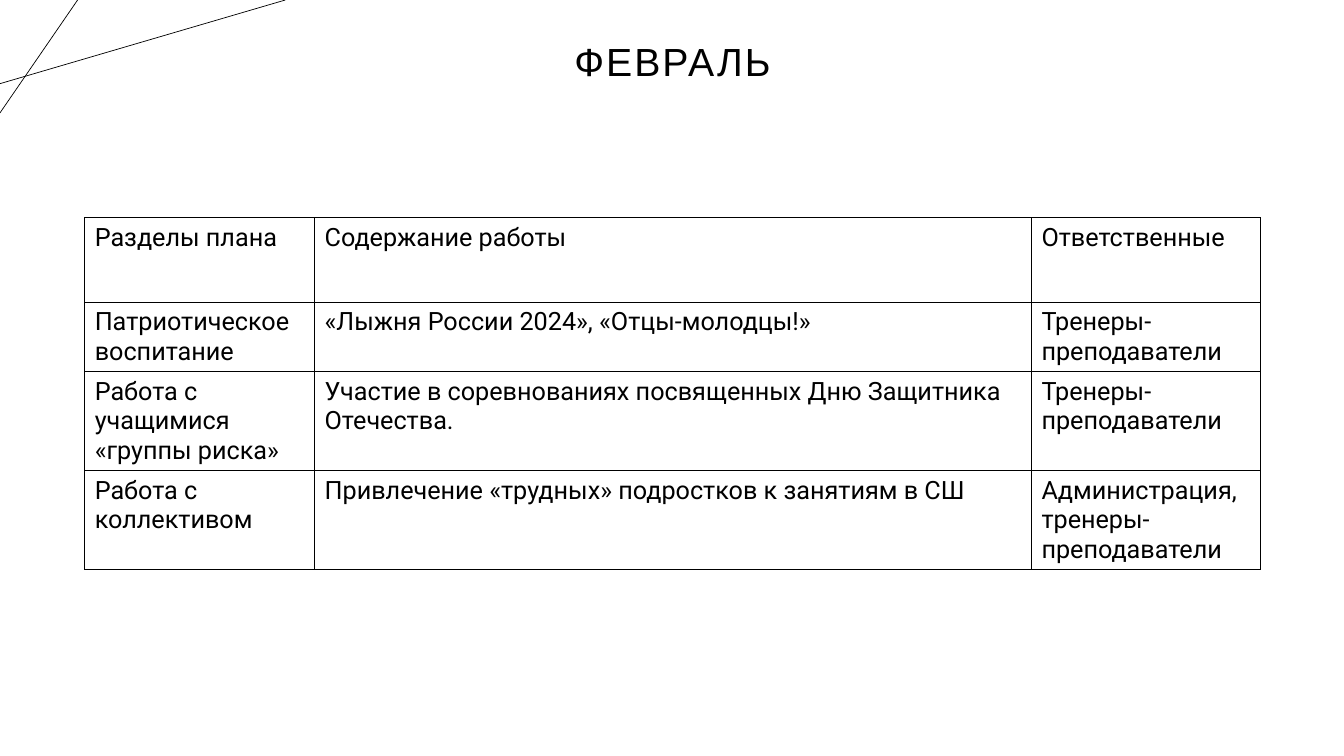
from lxml import etree
from pptx import Presentation
from pptx.dml.color import RGBColor
from pptx.enum import shapes, text
from pptx.oxml import ns
from pptx.util import Inches, Pt

COLORS = {"ink": "000000", "background": "FFFFFF"}
TITLE_FONT, TABLE_FONT = "Arial", "Roboto"

CORNER_LINES = [((0, 0.83), (2.83, 0)), ((0.77, 0), (0, 1.12))]
COLUMN_WIDTHS = [2.28, 7.11, 2.27]
ROW_HEIGHTS = [0.84, 0.69, 0.98, 0.98]
PLAN = [
    ["Разделы плана", "Содержание работы", "Ответственные"],
    ["Патриотическое воспитание", "«Лыжня России 2024», «Отцы-молодцы!»",
     "Тренеры-преподаватели"],
    ["Работа с учащимися «группы риска»",
     "Участие в соревнованиях посвященных Дню Защитника Отечества.",
     "Тренеры-преподаватели"],
    ["Работа с коллективом", "Привлечение «трудных» подростков к занятиям в СШ",
     "Администрация, тренеры-преподаватели"],
]


def color(name):
    return RGBColor.from_string(COLORS[name])


class PlanSlide:
    """Holds the current slide and draws its elements in one style."""

    def __init__(self, presentation):
        self.slide = presentation.slides.add_slide(presentation.slide_layouts[5])
        fill = self.slide.background.fill
        fill.solid()
        fill.fore_color.rgb = color("background")

    def add_run(self, paragraph, words, font, size):
        run = paragraph.add_run()
        run.text = words
        run.font.name = font
        run.font.size = Pt(size)
        run.font.color.rgb = color("ink")
        return run

    def line(self, start, end):
        connector = self.slide.shapes.add_connector(
            shapes.MSO_CONNECTOR.STRAIGHT, *map(Inches, start + end))
        connector.line.color.rgb = color("ink")
        connector.line.width = Pt(0.5)
        etree.SubElement(connector.element.spPr, ns.qn("a:effectLst"))

    def title(self, words, left, top, width, height):
        title = self.slide.shapes.title
        title.left, title.top = Inches(left), Inches(top)
        title.width, title.height = Inches(width), Inches(height)
        title.text_frame.vertical_anchor = text.MSO_ANCHOR.MIDDLE
        paragraph = title.text_frame.paragraphs[0]
        paragraph.alignment = text.PP_ALIGN.CENTER
        paragraph.line_spacing = 0.9
        run = self.add_run(paragraph, words, TITLE_FONT, 28)
        run.font._element.set("spc", "150")

    def cell_borders(self, cell):
        properties = cell._tc.get_or_add_tcPr()
        for position, side in enumerate(("lnL", "lnR", "lnT", "lnB")):
            border = etree.Element(ns.qn(f"a:{side}"), w=str(Pt(1)))
            fill = etree.SubElement(border, ns.qn("a:solidFill"))
            etree.SubElement(fill, ns.qn("a:srgbClr"), val=COLORS["ink"])
            properties.insert(position, border)

    def table(self, rows, left, top, widths, heights):
        frame = self.slide.shapes.add_table(
            len(rows), len(widths), Inches(left), Inches(top),
            Inches(sum(widths)), Inches(sum(heights)))
        table = frame.table
        table.first_row = table.horz_banding = False
        for column, width in zip(table.columns, widths):
            column.width = Inches(width)
        for row, height, entries in zip(table.rows, heights, rows):
            row.height = Inches(height)
            for cell, words in zip(row.cells, entries):
                cell.fill.background()
                self.cell_borders(cell)
                self.add_run(cell.text_frame.paragraphs[0], words, TABLE_FONT, 18)


def main():
    presentation = Presentation()
    presentation.slide_width = Inches(13.33)
    presentation.slide_height = Inches(7.5)
    plan = PlanSlide(presentation)

    # Corner decoration
    for start, end in CORNER_LINES:
        plan.line(start, end)

    # Month and its plan
    plan.title("ФЕВРАЛЬ", 0.92, 0.26, 11.5, 0.74)
    plan.table(PLAN, 0.84, 2.16, COLUMN_WIDTHS, ROW_HEIGHTS)

    presentation.save("out.pptx")


if __name__ == "__main__":
    main()
